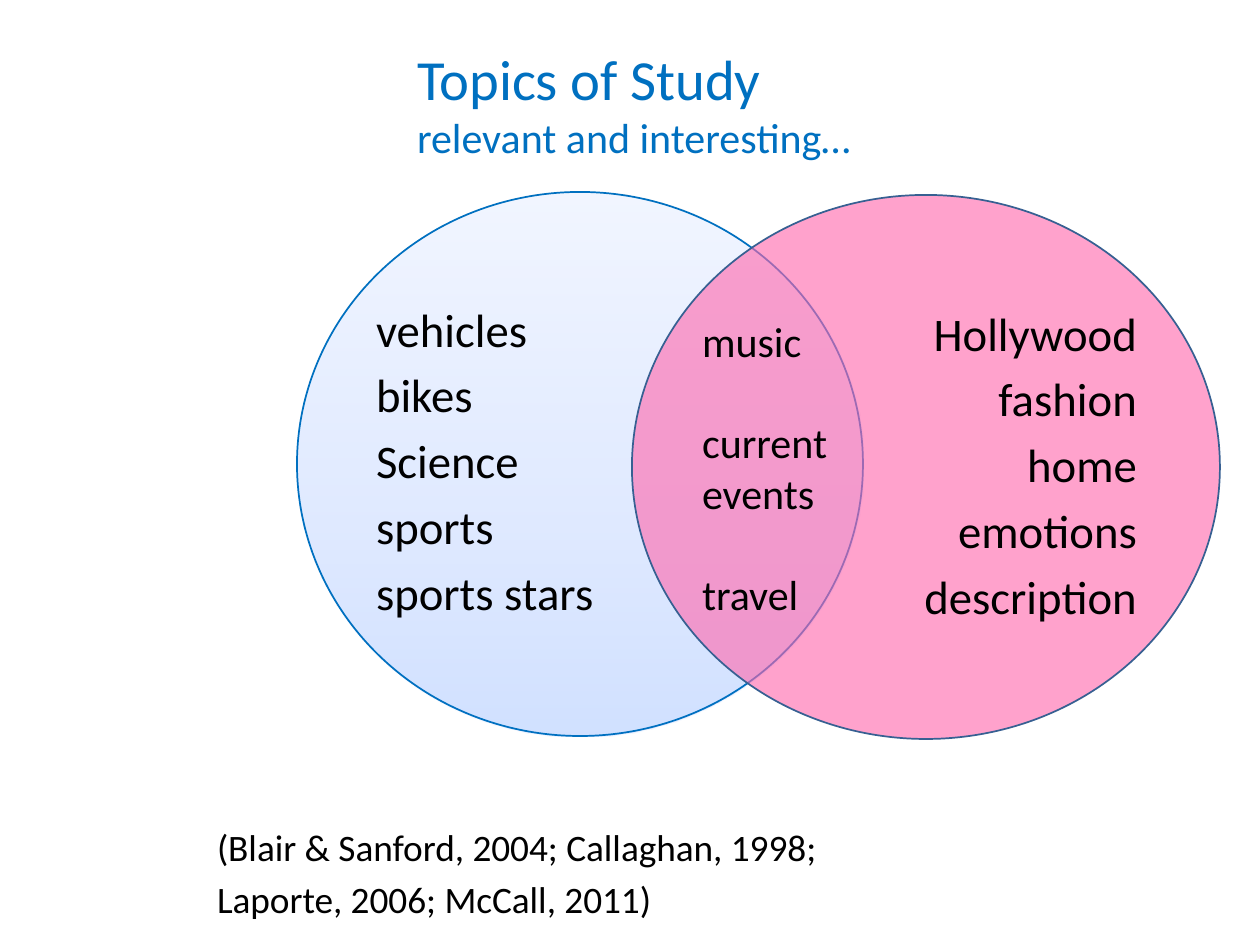
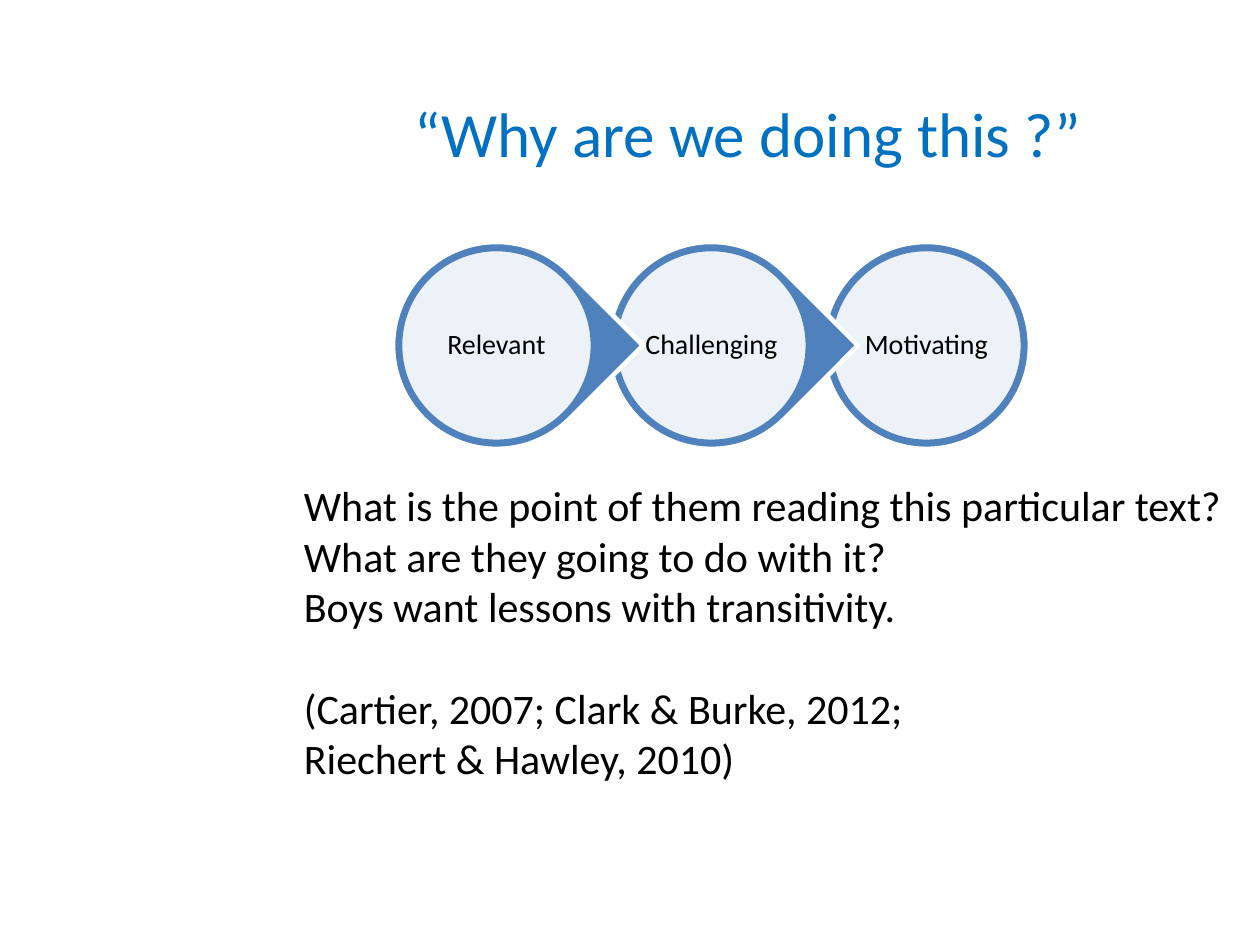
import pptx
import pptx.util
import pptx.dml.color
import pptx.enum.shapes
import pptx.enum.text
import pptx.oxml
import pptx.oxml.ns
import lxml.etree

RGB = pptx.dml.color.RGBColor
SHAPE = pptx.enum.shapes.MSO_SHAPE
ALIGN = pptx.enum.text.PP_ALIGN
ANCHOR = pptx.enum.text.MSO_ANCHOR
qn = pptx.oxml.ns.qn

FONT = "Calibri"
BLACK = RGB(0x00, 0x00, 0x00)
WHITE = RGB(0xFF, 0xFF, 0xFF)
TITLE_BLUE = RGB(0x00, 0x70, 0xC0)
RING_BLUE = RGB(0x4F, 0x81, 0xBD)
DARK_BLUE = RGB(0x37, 0x60, 0x92)
PINK = RGB(0xFF, 0x67, 0xAC)
SKY_STOPS = [(0, RGB(0xA4, 0xC4, 0xFF)), (35, RGB(0xBF, 0xD4, 0xFF)), (100, RGB(0xE6, 0xEE, 0xFF))]

PX = 914400 / 168
TITLE_TOP, TITLE_HEIGHT = 79, 106
BLANK_LINE = 22  # points, one line of 18 pt text


def write(holder, lines, box=None, size=18, color=BLACK, align=ALIGN.LEFT, anchor=ANCHOR.TOP,
          margins=(17, 8, 17, 8), wrap=True, line_spacing=1.0, before=0, after=0, gaps=()):
    """Place the holder and fill it; gaps lists the lines that follow a blank line's height."""
    if box:
        holder.left, holder.top, holder.width, holder.height = [round(v * PX) for v in box]
    frame = holder.text_frame
    frame.auto_size = pptx.enum.text.MSO_AUTO_SIZE.NONE
    frame.word_wrap = wrap
    frame.vertical_anchor = anchor
    (frame.margin_left, frame.margin_top,
     frame.margin_right, frame.margin_bottom) = [round(v * PX) for v in margins]
    for i, line in enumerate(lines):
        paragraph = frame.paragraphs[0] if i == 0 else frame.add_paragraph()
        paragraph.alignment = align
        paragraph.line_spacing = line_spacing
        paragraph.space_before = pptx.util.Pt(BLANK_LINE if i in gaps else before if i else 0)
        paragraph.space_after = pptx.util.Pt(after)
        run = paragraph.add_run()
        run.text = line
        run.font.name = FONT
        run.font.size = pptx.util.Pt(size)
        run.font.color.rgb = color


def draw(slide, preset, box, fill, line, width, opacity=100):
    shape = slide.shapes.add_shape(preset, *[round(v * PX) for v in box])
    shape.shadow.inherit = False
    shape.fill.solid()
    shape.fill.fore_color.rgb = fill
    if opacity < 100:
        color = shape.element.spPr.find(qn("a:solidFill"))[0]
        lxml.etree.SubElement(color, qn("a:alpha"), val=str(opacity * 1000))
    shape.line.color.rgb = line
    shape.line.width = pptx.util.Pt(width)
    return shape


deck = pptx.Presentation()
deck.slide_width, deck.slide_height = round(1260 * PX), round(945 * PX)

# Slide 1: topics of study
topics = deck.slides.add_slide(deck.slide_layouts[1])
heading = topics.shapes.title
write(heading, ["Topics of Study", "relevant and interesting…"],
      box=(400, TITLE_TOP, 694, TITLE_HEIGHT), size=24.3, color=TITLE_BLUE,
      anchor=ANCHOR.BOTTOM, margins=(17, 8, 17, 23))
heading.text_frame.paragraphs[1].runs[0].font.size = pptx.util.Pt(18)

# Left circle, tinted from bottom to top
left_circle = draw(topics, SHAPE.OVAL, (297, 192, 566, 544), WHITE, TITLE_BLUE, 0.75)
left_circle.fill.gradient()
left_circle.fill.gradient_angle = 90
stop_list = left_circle.element.spPr.find(qn("a:gradFill")).find(qn("a:gsLst"))
stop_list.clear()
for position, tint in SKY_STOPS:
    stop = lxml.etree.SubElement(stop_list, qn("a:gs"), pos=str(position * 1000))
    color = lxml.etree.SubElement(stop, qn("a:srgbClr"), val=str(tint))
    lxml.etree.SubElement(color, qn("a:alpha"), val="50000")

# Topic lists, with the right circle between them in the stack
circle_text = dict(size=20, anchor=ANCHOR.MIDDLE, margins=(0, 0, 0, 0), line_spacing=0.9, after=6.6)
write(topics.shapes.add_textbox(0, 0, 0, 0),
      ["vehicles", "bikes", "Science", "sports", "sports stars"],
      box=(376, 255, 326, 417), **circle_text)
draw(topics, SHAPE.OVAL, (632, 195, 588, 544), PINK, DARK_BLUE, 0.75, opacity=61)
write(topics.shapes.add_textbox(0, 0, 0, 0),
      ["Hollywood", "fashion", "home", "emotions", "description"],
      box=(798, 259, 339, 417), align=ALIGN.RIGHT, **circle_text)
write(topics.shapes.add_textbox(0, 0, 0, 0), ["music", "current", "events", "travel"],
      box=(685, 307, 176, 323), gaps=(1, 3))

# References
references = topics.placeholders[1]
write(references, ["(Blair & Sanford, 2004; Callaghan, 1998;", "Laporte, 2006; McCall, 2011)"],
      box=(200, 816, 894, 106), size=16, before=3.2)
for paragraph in references.text_frame.paragraphs:
    properties = paragraph._p.get_or_add_pPr()
    properties.set("marL", "0")
    properties.set("indent", "0")
    lxml.etree.SubElement(properties, qn("a:buNone"))

# Slide 2: reasons for the work
reasons = deck.slides.add_slide(deck.slide_layouts[5])
write(reasons.shapes.title, ["“Why are we doing this ?”"],
      box=(398, TITLE_TOP, 800, TITLE_HEIGHT), size=27, color=TITLE_BLUE, anchor=ANCHOR.MIDDLE)
write(reasons.shapes.add_textbox(0, 0, 0, 0),
      ["What is the point of them reading this particular text?",
       "What are they going to do with it?",
       "Boys want lessons with transitivity.",
       "(Cartier, 2007; Clark & Burke, 2012;",
       "Riechert & Hawley, 2010)"],
      box=(287, 472, 963, 323), gaps=(3,))

# Chain of steps, drawn from the last so each tip overlaps the next ring
steps = ["Relevant", "Challenging", "Motivating"]
RING, RIM, STEP = 207, 7, 215
for i in reversed(range(len(steps))):
    left, top = 393 + i * STEP, 242
    is_last = i == len(steps) - 1
    ring = draw(reasons, SHAPE.OVAL if is_last else SHAPE.TEAR, (left, top, RING, RING),
                RING_BLUE, WHITE, 2)
    if not is_last:
        ring.adjustments[0] = 1
        ring.rotation = 45
    disc = draw(reasons, SHAPE.OVAL, (left + RIM, top + RIM, RING - 2 * RIM, RING - 2 * RIM),
                WHITE, RING_BLUE, 2, opacity=90)
    write(disc, [steps[i]], size=12, align=ALIGN.CENTER, anchor=ANCHOR.MIDDLE,
          margins=(0, 0, 0, 0), wrap=False, line_spacing=0.9)

deck.save("out.pptx")
